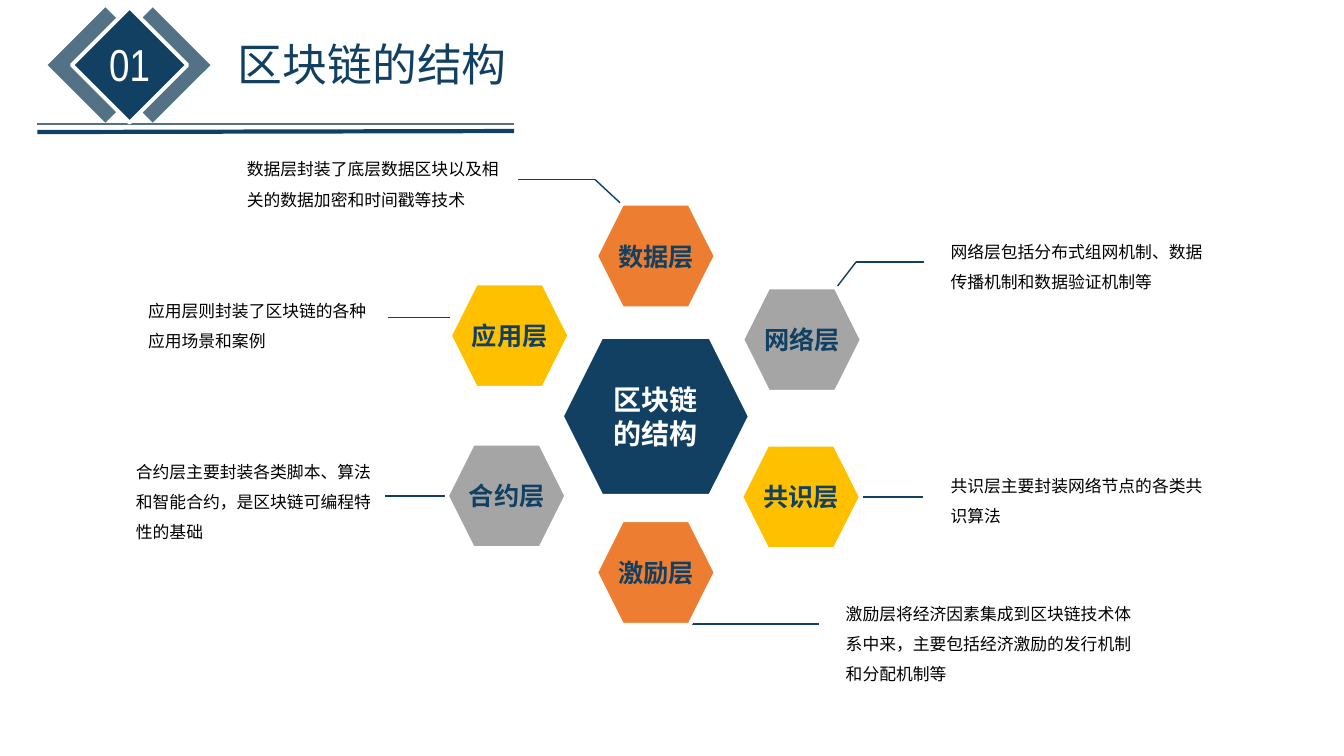
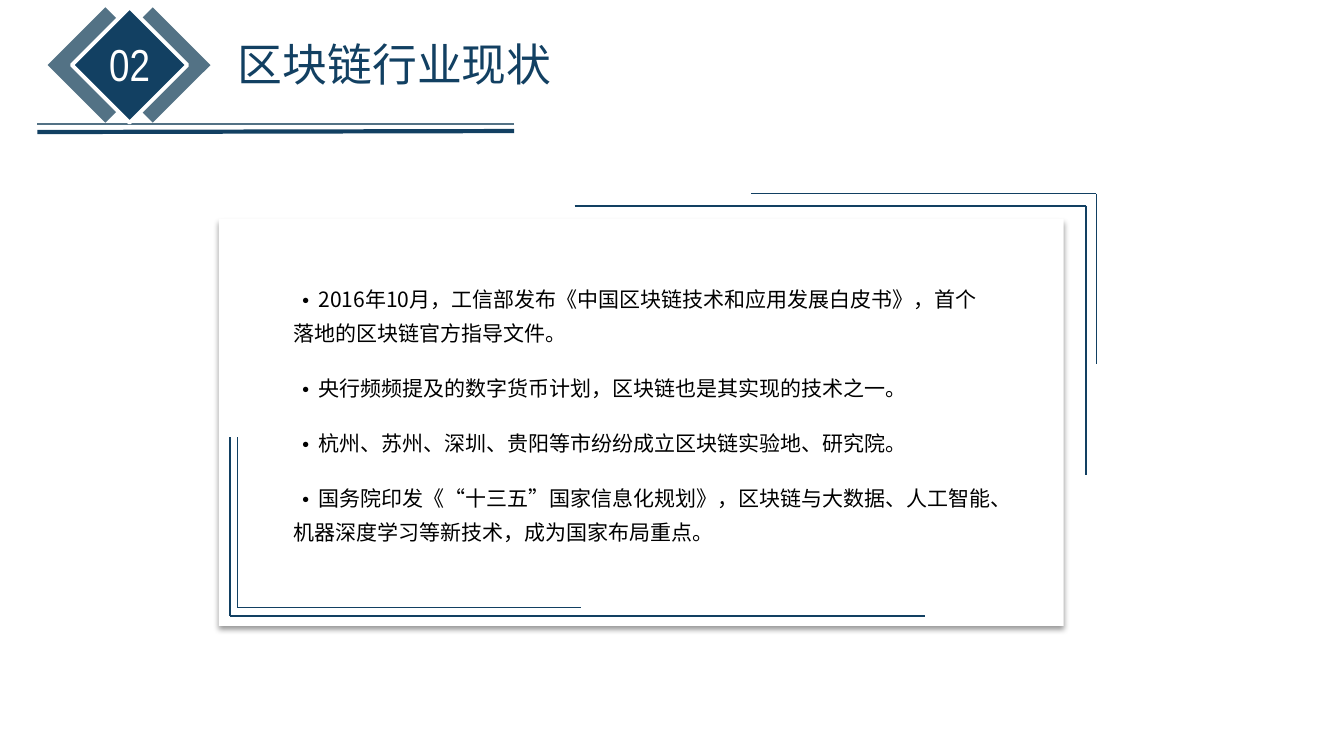
from itertools import pairwise

from lxml.etree import SubElement
from pptx import Presentation
from pptx.dml.color import RGBColor
from pptx.enum.shapes import MSO_CONNECTOR, MSO_SHAPE as SHAPE
from pptx.enum.text import MSO_ANCHOR as ANCHOR, MSO_AUTO_SIZE as AUTO, PP_ALIGN as ALIGN
from pptx.oxml.ns import qn
from pptx.util import Pt

SCALE = 9144
NAVY = RGBColor(0x12, 0x40, 0x62)
SLATE = RGBColor(0x53, 0x72, 0x85)
WHITE = RGBColor(0xFF, 0xFF, 0xFF)
BLACK = RGBColor(0, 0, 0)
ORANGE = RGBColor(0xED, 0x7D, 0x31)
GREY = RGBColor(0xA5, 0xA5, 0xA5)
GOLD = RGBColor(0xFF, 0xC0, 0x00)
CJK = "Noto Sans CJK SC"
NARROW = "Arial Narrow"

LAYERS = [
    ("数据层", ORANGE, (466, 59), [(389, 35), (465, 35), (493, 61)], (110, 0, 275, 71),
     "数据层封装了底层数据区块以及相关的数据加密和时间戳等技术"),
    ("网络层", GREY, (611, 142), [(704, 143), (724, 117), (791, 117)], (808, 82, 274, 71),
     "网络层包括分布式组网机制、数据传播机制和数据验证机制等"),
    ("共识层", GOLD, (610, 298), [(729, 350), (790, 350)], (808, 314, 274, 71),
     "共识层主要封装网络节点的各类共识算法"),
    ("激励层", ORANGE, (466, 373), [(560, 476), (687, 476)], (704, 441, 304, 101),
     "激励层将经济因素集成到区块链技术体系中来，主要包括经济激励的发行机制和分配机制等"),
    ("合约层", GREY, (318, 297), [(257, 349), (318, 349)], (0, 300, 257, 101),
     "合约层主要封装各类脚本、算法和智能合约，是区块链可编程特性的基础"),
    ("应用层", GOLD, (321, 138), [(260, 172), (321, 172)], (12, 140, 245, 71),
     "应用层则封装了区块链的各种应用场景和案例"),
]
FRAME_CORNERS = [
    ([(353, -13), (860, -13), (860, 254)], 1.5),
    ([(528, -25), (870, -25), (870, 144)], 0.5),
    ([(700, 394), (11, 394), (11, 217)], 1.5),
    ([(359, 386), (18, 386), (18, 217)], 0.5),
]
NEWS = [
    "2016年10月，工信部发布《中国区块链技术和应用发展白皮书》，首个落地的区块链官方指导文件。",
    "央行频频提及的数字货币计划，区块链也是其实现的技术之一。",
    "杭州、苏州、深圳、贵阳等市纷纷成立区块链实验地、研究院。",
    "国务院印发《“十三五”国家信息化规划》，区块链与大数据、人工智能、机器深度学习等新技术，成为国家布局重点。",
]


def px(*lengths):
    """Turn px lengths into EMU."""
    return [length * SCALE for length in lengths]


def add_bullet(paragraph):
    """Give a paragraph a middle dot that hangs at its first line."""
    props = paragraph._p.get_or_add_pPr()
    props.set("marL", "0")
    props.set("indent", "0")
    SubElement(props, qn("a:buSzPct"), val="120000")
    SubElement(props, qn("a:buFont"), typeface=CJK)
    SubElement(props, qn("a:buChar"), char="·")


def write(frame, *lines, size, color=BLACK, font=CJK, bold=False, align=ALIGN.LEFT,
          spacing=None, gap=0, bullet=False):
    """Fill a text frame with one paragraph for each line."""
    for index, line in enumerate(lines):
        paragraph = frame.add_paragraph() if index else frame.paragraphs[0]
        paragraph.alignment = align
        if spacing:
            paragraph.line_spacing = spacing
        if index and gap:
            paragraph.space_before = Pt(gap)
        if bullet:
            add_bullet(paragraph)
        run = paragraph.add_run()
        run.text = line
        run.font.size = Pt(size)
        run.font.bold = bold
        run.font.color.rgb = color
        run.font.name = font
        SubElement(run._r.get_or_add_rPr(), qn("a:ea"), typeface=font)


def add_text(slide, box, *lines, **style):
    """Place a wrapping text box and write into it."""
    frame = slide.shapes.add_textbox(*px(*box)).text_frame
    frame.word_wrap = True
    frame.auto_size = AUTO.SHAPE_TO_FIT_TEXT
    write(frame, *lines, **style)


def add_block(slide, kind, box, fill, border=0):
    """Place a flat shape, with a white border where one is asked for."""
    block = slide.shapes.add_shape(kind, *px(*box))
    block.shadow.inherit = False
    block.fill.solid()
    block.fill.fore_color.rgb = fill
    if border:
        block.line.color.rgb = WHITE
        block.line.width = Pt(border)
    else:
        block.line.fill.background()
    return block


def add_path(slide, left, top, points, width, color=NAVY):
    """Join points, given relative to a corner, with straight lines."""
    for (x1, y1), (x2, y2) in pairwise(points):
        segment = slide.shapes.add_connector(
            MSO_CONNECTOR.STRAIGHT, *px(left + x1, top + y1, left + x2, top + y2))
        segment.line.color.rgb = color
        segment.line.width = Pt(width)
        SubElement(segment._element.spPr, qn("a:effectLst"))


def add_header(slide, left, top, number, title):
    """Place the numbered diamonds, the title and the double rule."""
    add_path(slide, left, top, [(473, 99), (0, 99)], 1, SLATE)
    for x, fill, border in ((74, SLATE, 0), (27, SLATE, 0), (51, NAVY, 2.75)):
        diamond = add_block(slide, SHAPE.ROUNDED_RECTANGLE, (left + x, top, 81, 81), fill, border)
        diamond.adjustments[0] = 0
        diamond.rotation = 45
    add_text(slide, (left + 58, top + 8, 67, 64), number,
             size=32, color=WHITE, font=NARROW, align=ALIGN.CENTER)
    add_path(slide, left, top, [(473, 106), (0, 107)], 3)
    add_text(slide, (left + 189, top + 8, 444, 64), title, size=32, color=NAVY)


def add_hexagon(slide, box, label, fill, size, color, inset=0):
    """Place a hexagon with a bold label, which wraps if it has an inset."""
    hexagon = add_block(slide, SHAPE.HEXAGON, box, fill, 3)
    frame = hexagon.text_frame
    frame.margin_left = frame.margin_right = inset * SCALE
    frame.margin_top = frame.margin_bottom = 0
    frame.word_wrap = inset > 0
    frame.vertical_anchor = ANCHOR.MIDDLE
    write(frame, label, size=size, color=color, bold=True, align=ALIGN.CENTER)


def add_layer_diagram(slide, left, top):
    """Place the core hexagon and the layers around it with their notes."""
    for name, fill, (x, y), leader, (note_x, note_y, width, height), note in LAYERS:
        add_path(slide, left, top, leader, 1)
        add_hexagon(slide, (left + x, top + y, 119, 104), name, fill, 18, NAVY)
        add_text(slide, (left + note_x, top + note_y, width, height), note,
                 size=12, spacing=1.5)
    add_hexagon(slide, (left + 432, top + 191, 187, 158), "区块链的结构", NAVY, 20, WHITE, 17)


def add_news_card(slide, left, top):
    """Place the shadowed card, its corner lines and its list."""
    card = add_block(slide, SHAPE.RECTANGLE, (left, top, 838, 404), WHITE)
    effects = card._element.spPr.find(qn("a:effectLst"))
    shadow = SubElement(effects, qn("a:outerShdw"), blurRad=str(Pt(4)), dist=str(Pt(3)),
                        dir="5400000", algn="t", rotWithShape="0")
    tint = SubElement(shadow, qn("a:srgbClr"), val=str(BLACK))
    SubElement(tint, qn("a:alpha"), val="40000")
    for points, width in FRAME_CORNERS:
        add_path(slide, left, top, points, width)
    add_text(slide, (left + 64, top + 54, 712, 290), *NEWS,
             size=15, spacing=1.35, gap=15, bullet=True)


def main():
    """Build and save the two slides."""
    deck = Presentation()
    deck.slide_width, deck.slide_height = px(1333, 750)
    pages = [
        ("01", "区块链的结构", add_layer_diagram, (125, 143)),
        ("02", "区块链行业现状", add_news_card, (217, 217)),
    ]
    for number, title, add_body, corner in pages:
        slide = deck.slides.add_slide(deck.slide_layouts[6])
        add_header(slide, 37, 24, number, title)
        add_body(slide, *corner)
    deck.save("out.pptx")


if __name__ == "__main__":
    main()
